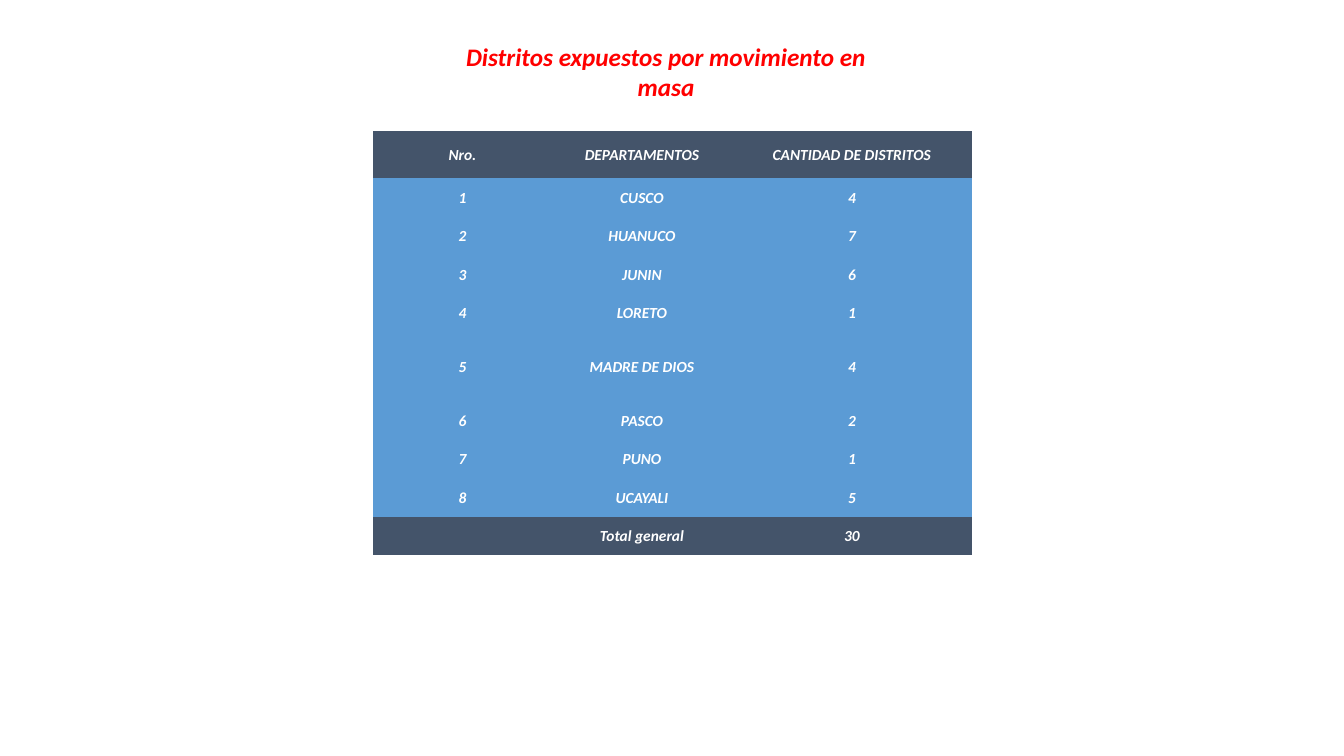
from pptx import Presentation
from pptx.dml.color import RGBColor
from pptx.enum.text import MSO_ANCHOR as Anchor, PP_ALIGN as Align
from pptx.util import Pt

# Content
TITLE = "Distritos expuestos por movimiento en masa"
HEADER = ("Nro.", "DEPARTAMENTOS", "CANTIDAD DE DISTRITOS")
DEPARTMENTS = [
    ("CUSCO", 4), ("HUANUCO", 7), ("JUNIN", 6), ("LORETO", 1),
    ("MADRE DE DIOS", 4), ("PASCO", 2), ("PUNO", 1), ("UCAYALI", 5),
]
TOTAL = ("", "Total general", sum(count for _, count in DEPARTMENTS))
COLORS = {"title": "FF0000", "band": "44546A", "body": "5B9BD5", "text": "FFFFFF"}

# Layout in px
PX = 9071.43
SLIDE_SIZE = (1344, 756)
TITLE_BOX = (425, 51, 482, 41)
TABLE_LEFT, TABLE_TOP = 373, 131
COLUMN_WIDTHS = (179, 180, 240)
ROW_HEIGHTS = (47, 39, 38, 39, 38, 70, 38, 38, 39, 38)
CELL_MARGIN = 1


def emu(px):
    return round(px * PX)


def style_paragraph(paragraph, size, color):
    paragraph.alignment = Align.CENTER
    font = paragraph.font
    font.name, font.size = "Calibri", Pt(size)
    font.bold = font.italic = True
    font.color.rgb = RGBColor.from_string(COLORS[color])


presentation = Presentation()
presentation.slide_width, presentation.slide_height = map(emu, SLIDE_SIZE)
slide = presentation.slides.add_slide(presentation.slide_layouts[5])

# Title
title = slide.shapes.title
title.left, title.top, title.width, title.height = map(emu, TITLE_BOX)
title.text_frame.text = TITLE
title.text_frame.word_wrap = False
title.text_frame.vertical_anchor = Anchor.MIDDLE
style_paragraph(title.text_frame.paragraphs[0], 18, "title")

# Table
rows = [HEADER]
rows += [(number, *entry) for number, entry in enumerate(DEPARTMENTS, 1)]
rows.append(TOTAL)
table = slide.shapes.add_table(
    len(rows), len(HEADER), emu(TABLE_LEFT), emu(TABLE_TOP),
    emu(sum(COLUMN_WIDTHS)), emu(sum(ROW_HEIGHTS))).table
for column, width in zip(table.columns, COLUMN_WIDTHS):
    column.width = emu(width)
table.horz_banding = False
table.first_row = False

# Cells: dark header and total, blue body
for row_index, (values, height) in enumerate(zip(rows, ROW_HEIGHTS)):
    table.rows[row_index].height = emu(height)
    fill = "band" if values in (HEADER, TOTAL) else "body"
    for column_index, value in enumerate(values):
        cell = table.cell(row_index, column_index)
        cell.fill.solid()
        cell.fill.fore_color.rgb = RGBColor.from_string(COLORS[fill])
        cell.vertical_anchor = Anchor.MIDDLE
        cell.margin_left = cell.margin_top = cell.margin_right = emu(CELL_MARGIN)
        cell.margin_bottom = 0
        cell.text = str(value)
        style_paragraph(cell.text_frame.paragraphs[0], 11, "text")

# Cell borders: none, so the fills meet without white rules
style_id = table._tbl.tblPr.find(
    "{http://schemas.openxmlformats.org/drawingml/2006/main}tableStyleId")
style_id.text = "{2D5ABB26-0587-4C30-8999-92F81FD0307C}"

presentation.save("out.pptx")
